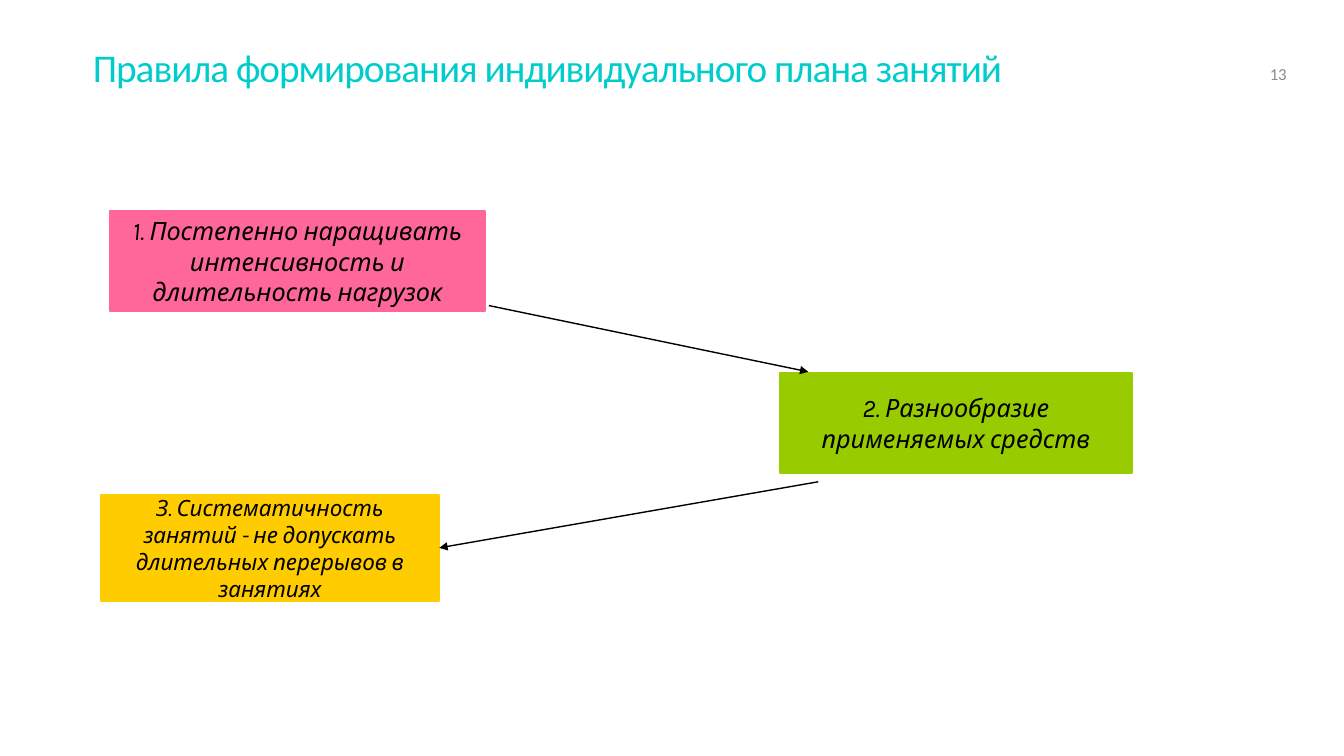
from lxml.etree import SubElement
from pptx import Presentation
from pptx.dml.color import RGBColor
from pptx.enum.shapes import MSO_CONNECTOR, MSO_SHAPE
from pptx.enum.text import MSO_ANCHOR, MSO_AUTO_SIZE, PP_ALIGN
from pptx.oxml.ns import qn
from pptx.util import Cm, Pt

COLORS = {
    "title": "00CCCC",
    "number": "8C8C90",
    "text": "000000",
    "load": "FF6699",
    "variety": "99CC00",
    "regularity": "FFCC00",
}
RULES = [
    ("1. Постепенно наращивать интенсивность и длительность нагрузок", "load", 18, (2.77, 5.31, 9.45, 2.54)),
    ("2. Разнообразие применяемых средств", "variety", 18, (19.66, 9.4, 8.86, 2.51)),
    ("З. Систематичность занятий - не допускать длительных перерывов в занятиях", "regularity", 16,
     (2.54, 12.47, 8.53, 2.67)),
]


def color(name):
    return RGBColor.from_string(COLORS[name])


def style_font(para, typeface, size, color_name):
    para.font.name = typeface
    para.font.size = Pt(size)
    para.font.color.rgb = color(color_name)


def set_margins(frame, side, edge):
    frame.margin_left = frame.margin_right = Cm(side)
    frame.margin_top = frame.margin_bottom = Cm(edge)


def add_title(page, box):
    title = page.shapes.title
    title.left, title.top, title.width, title.height = map(Cm, box)
    frame = title.text_frame
    frame.text = "Правила формирования индивидуального плана занятий"
    frame.auto_size = MSO_AUTO_SIZE.NONE
    frame.vertical_anchor = MSO_ANCHOR.TOP
    set_margins(frame, 0, 0.13)
    para = frame.paragraphs[0]
    para.alignment = PP_ALIGN.LEFT
    para.line_spacing = Pt(32)
    style_font(para, "Calibri", 28, "title")
    para.font._element.set("spc", "-70")


def add_page_number(page, box):
    frame = page.shapes.add_textbox(*map(Cm, box)).text_frame
    frame.text = "13"
    frame.word_wrap = False
    frame.vertical_anchor = MSO_ANCHOR.BOTTOM
    set_margins(frame, 0, 0.1)
    para = frame.paragraphs[0]
    para.alignment = PP_ALIGN.LEFT
    style_font(para, "Calibri", 12, "number")


def add_rule(page, text, fill, size, box):
    card = page.shapes.add_shape(MSO_SHAPE.RECTANGLE, *map(Cm, box))
    card.shadow.inherit = False
    card.fill.solid()
    card.fill.fore_color.rgb = color(fill)
    card.line.color.rgb = color(fill)
    card.line.width = Pt(1.5)
    frame = card.text_frame
    frame.text = text
    frame.word_wrap = True
    frame.vertical_anchor = MSO_ANCHOR.MIDDLE
    para = frame.paragraphs[0]
    para.alignment = PP_ALIGN.CENTER
    style_font(para, "Karla", size, "text")
    para.font.italic = True
    return card


def add_arrow(page, start, end):
    arrow = page.shapes.add_connector(MSO_CONNECTOR.STRAIGHT, *map(Cm, start + end))
    arrow.line.color.rgb = color("text")
    arrow.line.width = Pt(1)
    SubElement(arrow.line._get_or_add_ln(), qn("a:tailEnd"), type="triangle")
    SubElement(arrow._element.spPr, qn("a:effectLst"))
    return arrow


def add_rules(page):
    load, variety, regularity = [add_rule(page, *rule) for rule in RULES]
    add_arrow(page, (12.32, 7.7), (20.37, 9.37))
    add_arrow(page, (20.62, 12.14), (11.07, 13.8)).end_connect(regularity, 3)


def main():
    deck = Presentation()
    deck.slide_width, deck.slide_height = Cm(33.87), Cm(19.05)
    page = deck.slides.add_slide(deck.slide_layouts[5])
    add_title(page, (2.34, 1.02, 29.21, 2.62))
    add_page_number(page, (32, 1.02, 1.3, 1.19))
    add_rules(page)
    deck.save("out.pptx")


if __name__ == "__main__":
    main()
